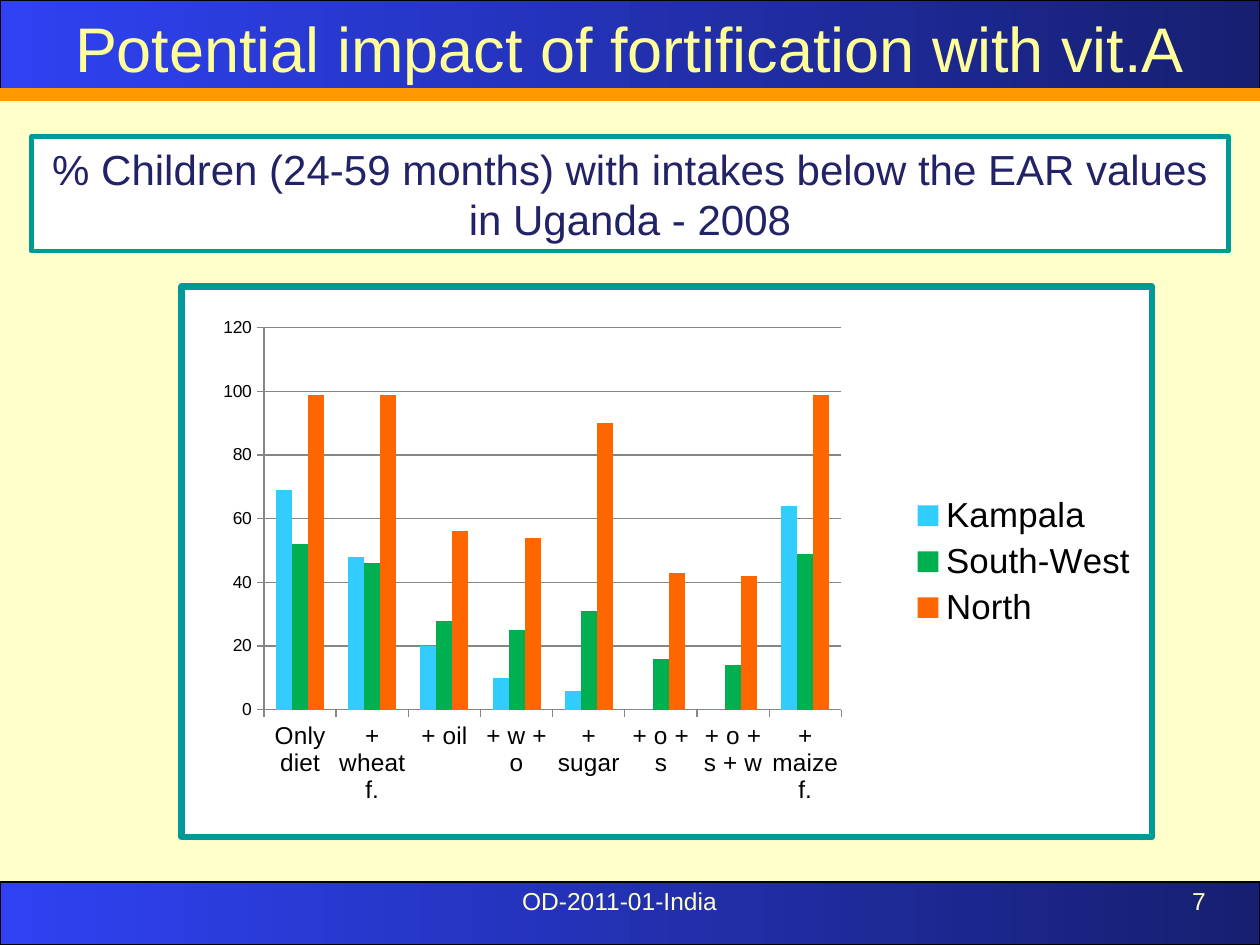
from dataclasses import dataclass

import pptx
import pptx.chart.data
import pptx.dml.color
import pptx.enum.chart
import pptx.enum.shapes
import pptx.enum.text
import pptx.oxml
import pptx.oxml.ns
import pptx.util
from lxml import etree

Pt = pptx.util.Pt
RGB = pptx.dml.color.RGBColor.from_string
Align = pptx.enum.text.PP_ALIGN
Anchor = pptx.enum.text.MSO_ANCHOR


@dataclass(frozen=True)
class Theme:
    font: str = "Arial"
    page: str = "FFFFCC"
    band_start: str = "2F42F3"
    band_end: str = "161F70"
    black: str = "000000"
    white: str = "FFFFFF"
    title: str = "FFFF99"
    rule: str = "FF9900"
    frame: str = "009999"
    subtitle: str = "222267"
    grid: str = "868686"
    title_size: int = 36
    subtitle_size: int = 24
    legend_size: int = 20
    small_size: int = 14
    value_size: int = 10


THEME = Theme()
WIDTH, HEIGHT = 720, 540

CATEGORIES = ["Only diet", "+ wheat f.", "+ oil", "+ w + o",
              "+ sugar", "+ o + s", "+ o + s + w", "+ maize f."]
REGIONS = [
    ("Kampala", "33CCFF", [69, 48, 20, 10, 6, 0, 0, 64]),
    ("South-West", "00B050", [52, 46, 28, 25, 31, 16, 14, 49]),
    ("North", "FF6600", [99, 99, 56, 54, 90, 43, 42, 99]),
]


def write(frame, text, size, color, align, anchor):
    frame.word_wrap = True
    frame.vertical_anchor = anchor
    paragraph = frame.paragraphs[0]
    paragraph.alignment = align
    run = paragraph.add_run()
    run.text = text
    style_font(run.font, size, color)


def style_font(font, size, color):
    font.name = THEME.font
    font.size = Pt(size)
    font.color.rgb = RGB(color)


def add_rectangle(slide, left, top, width, height, line_color, line_width):
    rectangle = slide.shapes.add_shape(
        pptx.enum.shapes.MSO_SHAPE.RECTANGLE, Pt(left), Pt(top), Pt(width), Pt(height))
    rectangle.shadow.inherit = False
    rectangle.line.color.rgb = RGB(line_color)
    rectangle.line.width = Pt(line_width)
    return rectangle


def add_band(slide, top, height):
    """Add a full-width bar shaded from left to right."""
    band = add_rectangle(slide, 0, top, WIDTH, height, THEME.black, 0.75)
    band.fill.gradient()
    band.fill.gradient_angle = 0
    for stop, color in zip(band.fill.gradient_stops, (THEME.band_start, THEME.band_end)):
        stop.color.rgb = RGB(color)


def place_title(slide, text):
    """Fill the title placeholder and bring it in front of the header band."""
    title = slide.shapes.title
    title.left, title.top, title.width, title.height = Pt(0), Pt(0), Pt(WIDTH), Pt(54)
    write(title.text_frame, text, THEME.title_size, THEME.title, Align.CENTER, Anchor.MIDDLE)
    title.element.getparent().append(title.element)


def add_rule(slide, top):
    rule = slide.shapes.add_connector(
        pptx.enum.shapes.MSO_CONNECTOR.STRAIGHT, Pt(0), Pt(top), Pt(WIDTH), Pt(top))
    rule.line.color.rgb = RGB(THEME.rule)
    rule.line.width = Pt(8)
    etree.SubElement(rule.element.spPr, pptx.oxml.ns.qn("a:effectLst"))


def add_footer_text(slide, left, width, text, align):
    box = slide.shapes.add_textbox(Pt(left), Pt(502.5), Pt(width), Pt(37.5))
    write(box.text_frame, text, THEME.small_size, THEME.page, align, Anchor.TOP)


def add_subtitle(slide, text):
    panel = add_rectangle(slide, 18, 78, 684, 65.5, THEME.frame, 2.5)
    panel.fill.solid()
    panel.fill.fore_color.rgb = RGB(THEME.white)
    write(panel.text_frame, text, THEME.subtitle_size, THEME.subtitle,
          Align.CENTER, Anchor.MIDDLE)


def add_intake_chart(slide):
    data = pptx.chart.data.CategoryChartData()
    data.categories = CATEGORIES
    for region, _, shares in REGIONS:
        data.add_series(region, shares)
    chart = slide.shapes.add_chart(
        pptx.enum.chart.XL_CHART_TYPE.COLUMN_CLUSTERED,
        Pt(102), Pt(162), Pt(558), Pt(318), data).chart
    chart.has_title = False
    style_font(chart.font, THEME.value_size, THEME.black)

    plot = chart.plots[0]
    plot.vary_by_categories = False
    plot.gap_width, plot.overlap = 150, 0
    for series, (_, color, _) in zip(plot.series, REGIONS):
        series.format.fill.solid()
        series.format.fill.fore_color.rgb = RGB(color)

    style_axes(chart)
    chart.has_legend = True
    chart.legend.position = pptx.enum.chart.XL_LEGEND_POSITION.RIGHT
    chart.legend.include_in_layout = False
    style_font(chart.legend.font, THEME.legend_size, THEME.black)
    frame_chart(chart)
    fix_plot_area(chart, x=0.085, y=0.075, w=0.595, h=0.694)


def style_axes(chart):
    tick_mark = pptx.enum.chart.XL_TICK_MARK
    for axis, size in ((chart.category_axis, THEME.small_size),
                       (chart.value_axis, THEME.value_size)):
        axis.major_tick_mark = tick_mark.OUTSIDE
        axis.minor_tick_mark = tick_mark.NONE
        axis.format.line.color.rgb = RGB(THEME.grid)
        style_font(axis.tick_labels.font, size, THEME.black)
    values = chart.value_axis
    values.minimum_scale, values.maximum_scale, values.major_unit = 0, 120, 20
    values.has_major_gridlines = True
    values.major_gridlines.format.line.color.rgb = RGB(THEME.grid)


def frame_chart(chart):
    """Give the chart area its fill and border."""
    chart_area = pptx.oxml.parse_xml(
        f'<c:spPr {pptx.oxml.ns.nsdecls("c", "a")}>'
        f'<a:solidFill><a:srgbClr val="{THEME.white}"/></a:solidFill>'
        f'<a:ln w="{Pt(3.5)}"><a:solidFill><a:srgbClr val="{THEME.frame}"/></a:solidFill></a:ln>'
        '</c:spPr>')
    chart.element.find(pptx.oxml.ns.qn("c:chart")).addnext(chart_area)


def fix_plot_area(chart, **fractions):
    """Set the inner plot area as fractions of the chart."""
    qn = pptx.oxml.ns.qn
    plot_area = chart.element.find(".//" + qn("c:plotArea"))
    for automatic in plot_area.findall(qn("c:layout")):
        plot_area.remove(automatic)
    layout = etree.Element(qn("c:layout"))
    manual = etree.SubElement(layout, qn("c:manualLayout"))
    settings = {"layoutTarget": "inner", "xMode": "edge", "yMode": "edge", **fractions}
    for tag, value in settings.items():
        etree.SubElement(manual, qn("c:" + tag)).set("val", str(value))
    plot_area.insert(0, layout)


def main():
    deck = pptx.Presentation()
    deck.slide_width, deck.slide_height = Pt(WIDTH), Pt(HEIGHT)
    slide = deck.slides.add_slide(deck.slide_layouts.get_by_name("Title Only"))
    slide.background.fill.solid()
    slide.background.fill.fore_color.rgb = RGB(THEME.page)

    add_band(slide, 0, 54)
    add_band(slide, 504, 36)
    add_footer_text(slide, 222, 264, "OD-2011-01-India", Align.CENTER)
    add_footer_text(slide, 528, 168, "7", Align.RIGHT)
    place_title(slide, "Potential impact of fortification with vit.A")
    add_rule(slide, 54)
    add_intake_chart(slide)
    add_subtitle(slide, "% Children (24-59 months) with intakes below the EAR values "
                        "in Uganda - 2008")
    deck.save("out.pptx")


if __name__ == "__main__":
    main()
